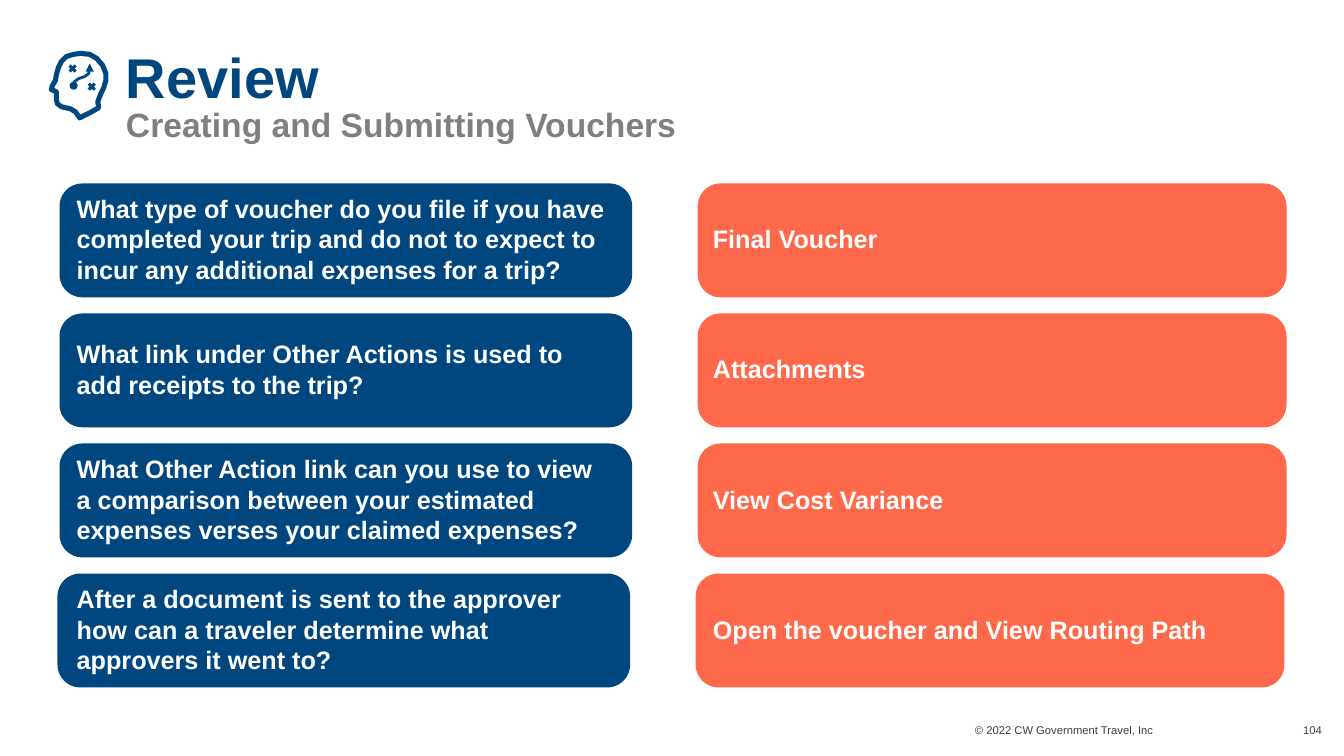
from pptx import Presentation
from pptx.dml.color import RGBColor
from pptx.enum.shapes import MSO_SHAPE as Shape
from pptx.enum.text import MSO_ANCHOR as Anchor, PP_ALIGN as Align
from pptx.util import Inches, Pt

NAVY = RGBColor(0x00, 0x46, 0x7F)
CORAL = RGBColor(0xFF, 0x69, 0x4B)
GRAY = RGBColor(0x7F, 0x7F, 0x7F)
SLATE = RGBColor(0x33, 0x3F, 0x48)
WHITE = RGBColor(0xFF, 0xFF, 0xFF)

ROW_PITCH, CARD_HEIGHT = 1.29, 1.13
CORNER_RATIO = 0.2
CORNER_INSET = 0.29 * CORNER_RATIO * CARD_HEIGHT
QUESTION_WIDTH, ANSWER_LEFT, ANSWER_WIDTH = 5.68, 6.33, 5.84
QUESTION_TEXT_LEFT, ANSWER_TEXT_LEFT = 0.76, 7.07

# Each row: question, right edge of its text, answer, left edge of the row
REVIEW_ROWS = [
    ("What type of voucher do you file if you have completed your trip "
     "and do not to expect to incur any additional expenses for a trip?",
     6.18, "Final Voucher", 0.59),
    ("What link under Other Actions is used to add receipts to the trip?",
     6.0, "Attachments", 0.59),
    ("What Other Action link can you use to view a comparison between "
     "your estimated expenses verses your claimed expenses?",
     5.97, "View Cost Variance", 0.59),
    ("After a document is sent to the approver how can a traveler "
     "determine what approvers it went to?",
     6.0, "Open the voucher and View Routing Path", 0.57),
]

HEAD = [
    (0.57, 0.23), (0.57, 0.3), (0.55, 0.37), (0.52, 0.43), (0.49, 0.51),
    (0.5, 0.57), (0.41, 0.62), (0.31, 0.67), (0.27, 0.61), (0.22, 0.58),
    (0.13, 0.56), (0.09, 0.53), (0.08, 0.49), (0.08, 0.45), (0.08, 0.41),
    (0.03, 0.39), (0.04, 0.35), (0.07, 0.3), (0.08, 0.24), (0.1, 0.17),
    (0.13, 0.11), (0.18, 0.06), (0.25, 0.04), (0.32, 0.03), (0.41, 0.04),
    (0.48, 0.08), (0.54, 0.15),
]
ROUTE = [(0.25, 0.35), (0.26, 0.31), (0.3, 0.28), (0.36, 0.26),
         (0.4, 0.23), (0.41, 0.17)]
CROSSES = [(0.24, 0.18), (0.43, 0.36)]
CROSS_ARM = 0.03


def set_frame(frame, anchor, left=0, right=0):
    """Wrap a text frame and set its insets in inches."""
    frame.word_wrap = True
    frame.vertical_anchor = anchor
    frame.margin_left, frame.margin_right = Inches(left), Inches(right)
    frame.margin_top = frame.margin_bottom = 0


def set_font(font, size, color, bold=False):
    """Give a font the deck's typeface, size and colour."""
    font.name, font.size, font.bold = "Arial", Pt(size), bold
    font.color.rgb = color


def fill_plain(shape, color):
    """Fill a shape with one colour, with no outline or shadow."""
    shape.shadow.inherit = False
    shape.fill.solid()
    shape.fill.fore_color.rgb = color
    shape.line.fill.background()


def add_stroke(slide, left, top, points, weight, close=False):
    """Draw an unfilled line through points given relative to left and top."""
    corners = [(Inches(left + x), Inches(top + y)) for x, y in points]
    builder = slide.shapes.build_freeform(*corners[0])
    builder.add_line_segments(corners[1:], close=close)
    stroke = builder.convert_to_shape()
    stroke.shadow.inherit = False
    stroke.fill.background()
    stroke.line.color.rgb = NAVY
    stroke.line.width = Pt(weight)


def add_head_icon(slide, left, top):
    """Draw a head in profile with a route and two crosses inside."""
    add_stroke(slide, left, top, HEAD, 3.6, close=True)
    add_stroke(slide, left, top, ROUTE, 2)
    for x, y in CROSSES:
        for rise in (CROSS_ARM, -CROSS_ARM):
            add_stroke(slide, left, top,
                       [(x - CROSS_ARM, y - rise), (x + CROSS_ARM, y + rise)], 2.2)
    for kind, x, y, size in ((Shape.OVAL, 0.21, 0.31, 0.08),
                             (Shape.ISOSCELES_TRIANGLE, 0.37, 0.13, 0.08)):
        fill_plain(slide.shapes.add_shape(
            kind, Inches(left + x), Inches(top + y), Inches(size), Inches(size)), NAVY)


def add_title(slide, left, top, width, height):
    """Write the heading with its subtitle on the line below."""
    frame = slide.shapes.add_textbox(
        Inches(left), Inches(top), Inches(width), Inches(height)).text_frame
    set_frame(frame, Anchor.BOTTOM)
    heading = frame.paragraphs[0]
    heading.line_spacing = 0.85
    title = heading.add_run()
    title.text = "Review"
    set_font(title.font, 40, NAVY, bold=True)
    heading.add_line_break()
    subtitle = heading.add_run()
    subtitle.text = "Creating and Submitting Vouchers"
    set_font(subtitle.font, 24, GRAY, bold=True)


def add_card(slide, left, top, width, text, color, text_left, text_right):
    """Place a rounded card whose text runs between two slide positions."""
    card = slide.shapes.add_shape(
        Shape.ROUNDED_RECTANGLE, Inches(left), Inches(top),
        Inches(width), Inches(CARD_HEIGHT))
    card.adjustments[0] = CORNER_RATIO
    fill_plain(card, color)
    set_frame(card.text_frame, Anchor.MIDDLE,
              max(0, text_left - left - CORNER_INSET),
              max(0, left + width - text_right - CORNER_INSET))
    card.text_frame.margin_bottom = Inches(0.03)
    card.text_frame.text = text
    line = card.text_frame.paragraphs[0]
    line.alignment = Align.LEFT
    set_font(line.font, 18, WHITE, bold=True)


def add_review_rows(slide, top):
    """Stack the questions on the left with their answers on the right."""
    for index, (question, question_right, answer, left) in enumerate(REVIEW_ROWS):
        row_top = top + index * ROW_PITCH
        add_card(slide, left, row_top, QUESTION_WIDTH, question, NAVY,
                 QUESTION_TEXT_LEFT, question_right)
        answer_left = left + ANSWER_LEFT
        add_card(slide, answer_left, row_top, ANSWER_WIDTH, answer, CORAL,
                 ANSWER_TEXT_LEFT, answer_left + ANSWER_WIDTH)


def add_footer(slide, top):
    """Write the copyright line and the page number."""
    for text, left, width in (("© 2022 CW Government Travel, Inc", 8.38, 3.06),
                              ("104", 12.78, 0.33)):
        frame = slide.shapes.add_textbox(
            Inches(left), Inches(top), Inches(width), Inches(0.14)).text_frame
        set_frame(frame, Anchor.TOP)
        frame.text = text
        frame.paragraphs[0].alignment = Align.RIGHT
        set_font(frame.paragraphs[0].font, 8, SLATE)


def main():
    """Build the review slide and save it."""
    deck = Presentation()
    deck.slide_width, deck.slide_height = Inches(13.33), Inches(7.5)
    slide = deck.slides.add_slide(deck.slide_layouts[6])
    add_head_icon(slide, 0.48, 0.5)
    add_title(slide, 1.25, 0.51, 11.53, 0.92)
    add_review_rows(slide, 1.82)
    add_footer(slide, 7.18)
    deck.save("out.pptx")


if __name__ == "__main__":
    main()
